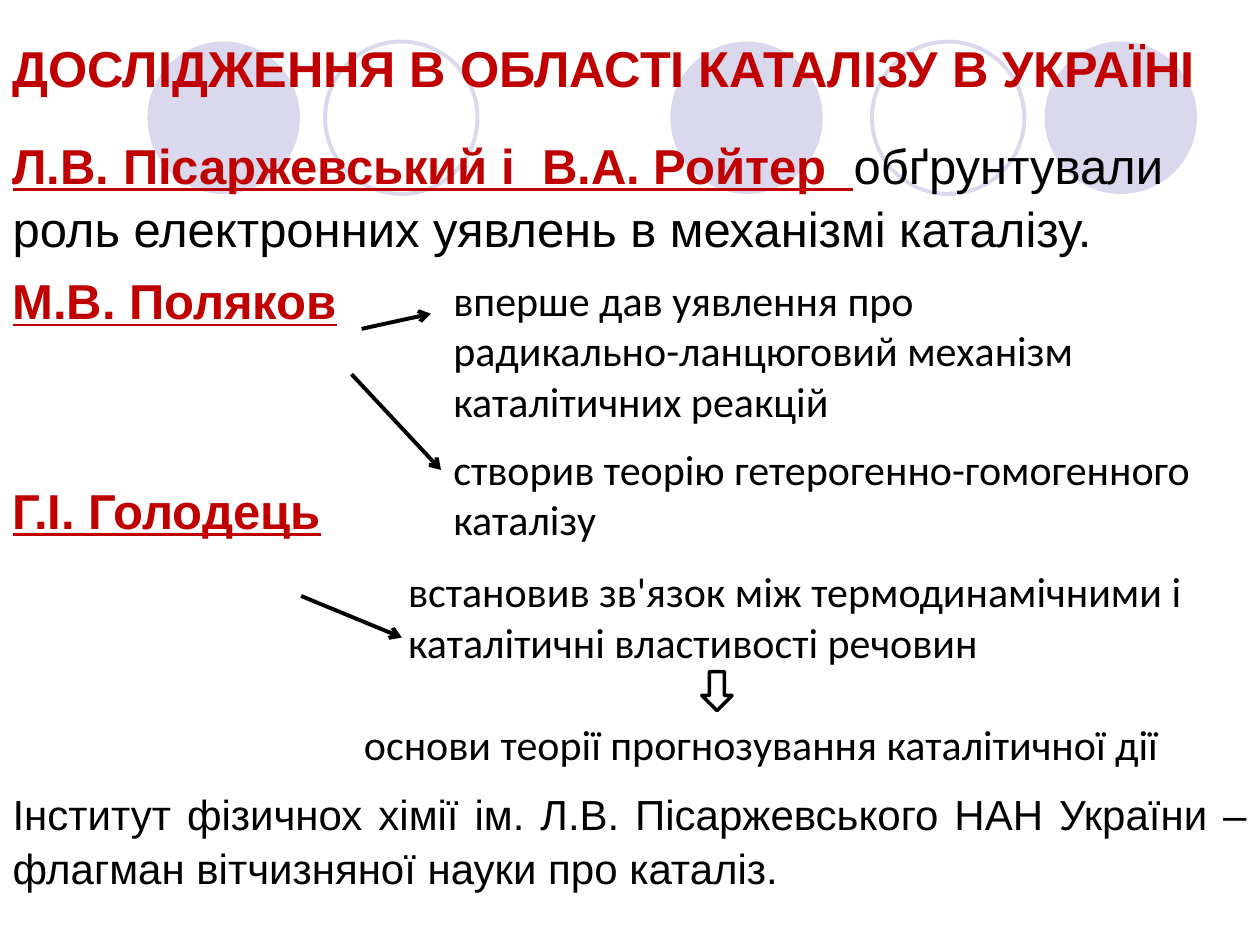
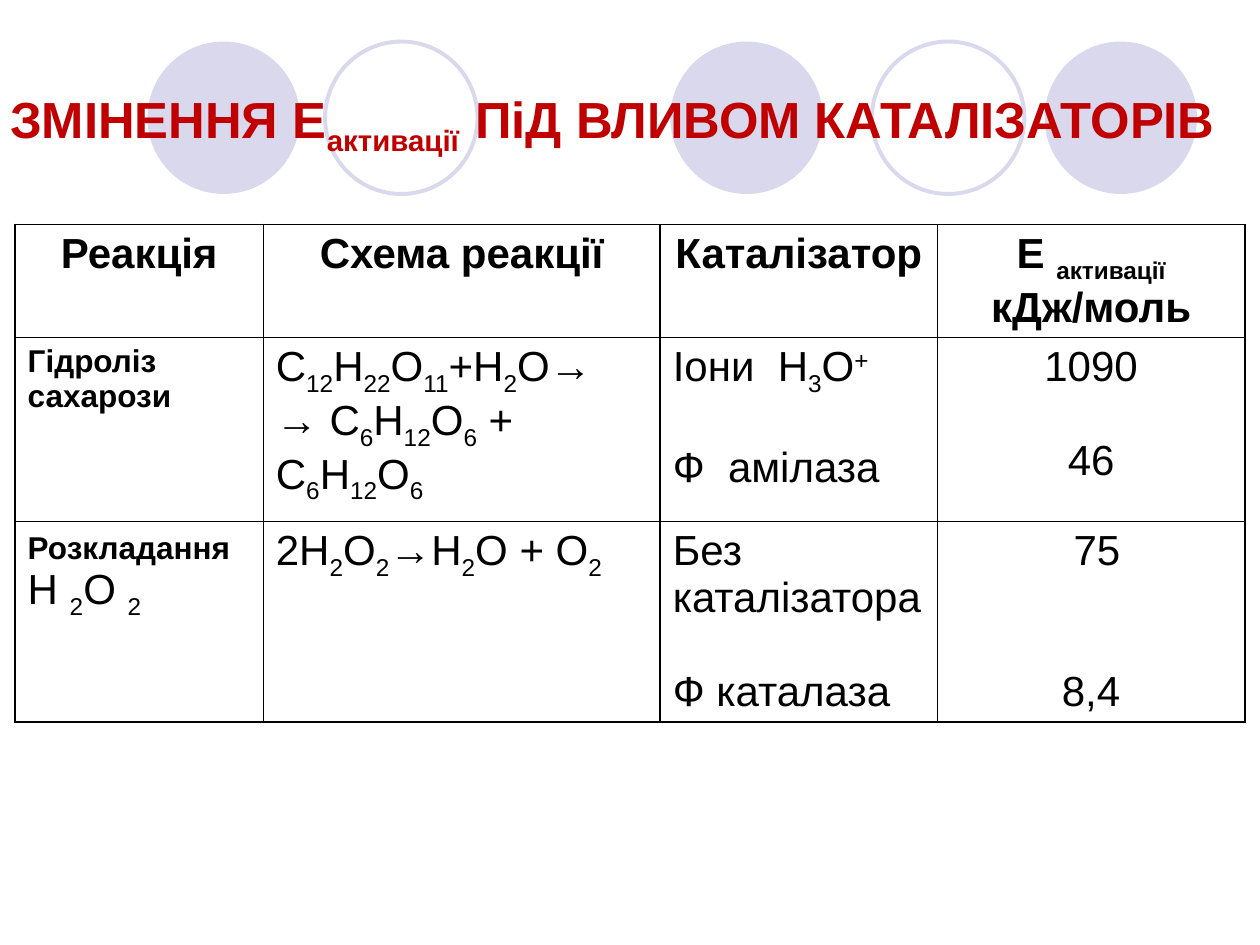
from lxml import etree
from pptx import Presentation
from pptx.dml.color import RGBColor
from pptx.enum import shapes, text
from pptx.oxml import ns
from pptx.util import Inches, Pt

HUE = {"red": "C00000", "ink": "000000", "ring": "D9D8EC"}
LEFT, MID, JUST = text.PP_ALIGN.LEFT, text.PP_ALIGN.CENTER, text.PP_ALIGN.JUSTIFY


def write(para, words, size, hue="ink", bold=False, under=False, font="Arial"):
    """Add runs; parts between underscores are lowered, a lone + is raised."""
    for i, part in enumerate(words.split("_")):
        if not part:
            continue
        run = para.add_run()
        run.text = part
        face = run.font
        face.name, face.size, face.bold, face.underline = font, Pt(size), bold, under
        face.color.rgb = RGBColor.from_string(HUE[hue])
        if i % 2:
            shift = "30000" if part == "+" else "-25000"
            run._r.get_or_add_rPr().set("baseline", shift)


def place(shape, *box):
    shape.left, shape.top, shape.width, shape.height = map(Inches, box)


prs = Presentation()
prs.slide_width, prs.slide_height = Inches(10), Inches(7.5)
work = prs.slides.add_slide(prs.slide_layouts[1])
data = prs.slides.add_slide(prs.slide_layouts[5])

# Circles shared through the master
tree = prs.slide_master.shapes.element
rings = [(5.32, True), (8.29, True), (1.17, True), (6.92, False), (2.58, False)]
for i, (x, full) in enumerate(rings):
    ring = work.shapes.add_shape(shapes.MSO_SHAPE.OVAL, Inches(x), Inches(0.33),
                                 Inches(1.21), Inches(1.21))
    ring.shadow.inherit = False
    tint = RGBColor.from_string(HUE["ring"])
    if full:
        ring.fill.solid()
        ring.fill.fore_color.rgb = tint
        ring.line.fill.background()
    else:
        ring.fill.background()
        ring.line.color.rgb = tint
        ring.line.width = Pt(2.25)
    ring.element.nvSpPr.cNvPr.set("id", str(50 + i))
    ring.name = f"Circle {i + 1}"
    tree.insert(2 + i, ring.element)

# Titles
heads = [
    (work, 0, 0, 28.8, "ДОСЛІДЖЕННЯ В ОБЛАСТІ КАТАЛІЗУ В УКРАЇНІ"),
    (data, -0.02, 0.44, 29, "ЗМІНЕННЯ Е_активації  _ПіД ВЛИВОМ КАТАЛІЗАТОРІВ"),
]
for slide, x, y, size, words in heads:
    title = slide.shapes.title
    place(title, x, y, 10, 1.07)
    frame = title.text_frame
    frame.auto_size = text.MSO_AUTO_SIZE.NONE
    frame.vertical_anchor = text.MSO_ANCHOR.MIDDLE
    frame.paragraphs[0].alignment = LEFT
    write(frame.paragraphs[0], words, size, "red", True)

# Slide 1: researchers
body = work.placeholders[1]
place(body, 0, 0.99, 10, 6.51)
frame = body.text_frame
frame.auto_size = text.MSO_AUTO_SIZE.NONE
names = [
    (5.6, LEFT, 28, "Л.В. Пісаржевський і  В.А. Ройтер  ",
     "обґрунтували роль електронних уявлень в механізмі каталізу."),
    (5.6, LEFT, 28, "М.В. Поляков", ""),
    (83.5, LEFT, 28, "Г.І. Голодець", ""),
    (140.5, JUST, 24, "", "Інститут фізичнох хімії ім. Л.В. Пісаржевського НАН України – "
     "флагман вітчизняної науки про каталіз."),
]
for i, (gap, side, size, name, rest) in enumerate(names):
    para = frame.paragraphs[0] if i == 0 else frame.add_paragraph()
    para.alignment, para.space_before, para.line_spacing = side, Pt(gap), 1.07
    props = para._p.get_or_add_pPr()
    props.set("marL", "0")
    props.set("indent", "0")
    etree.SubElement(props, ns.qn("a:buNone"))
    write(para, name, size, "red", True, True)
    write(para, rest, size)

notes = [
    (3.5, 2.13, 5.67, 1.31, True,
     ["вперше дав уявлення про", "радикально-ланцюговий механізм каталітичних реакцій"]),
    (3.5, 3.47, 6.06, 0.91, False,
     ["створив теорію гетерогенно-гомогенного", "каталізу"]),
    (3.14, 4.44, 7.03, 0.91, True,
     ["встановив зв'язок між термодинамічними і каталітичні властивості речовин"]),
    (2.79, 5.65, 6.56, 0.5, False,
     ["основи теорії прогнозування каталітичної дії"]),
]
for *box, wrap, lines in notes:
    note = work.shapes.add_textbox(*map(Inches, box))
    frame = note.text_frame
    frame.word_wrap = wrap
    frame.auto_size = text.MSO_AUTO_SIZE.SHAPE_TO_FIT_TEXT
    for i, words in enumerate(lines):
        para = frame.paragraphs[0] if i == 0 else frame.add_paragraph()
        write(para, words, 24, font="Calibri")

for ends in [(2.87, 2.61, 3.42, 2.49), (2.79, 2.97, 3.5, 3.73), (2.39, 4.73, 3.19, 5.06)]:
    link = work.shapes.add_connector(shapes.MSO_CONNECTOR.STRAIGHT, *map(Inches, ends))
    link.line.color.rgb = RGBColor.from_string(HUE["ink"])
    link.line.width = Pt(2.25)
    etree.SubElement(link.line._get_or_add_ln(), ns.qn("a:tailEnd"), type="arrow")
    etree.SubElement(link.element.spPr, ns.qn("a:effectLst"))

down = work.shapes.add_shape(shapes.MSO_SHAPE.DOWN_ARROW, Inches(5.57), Inches(5.33),
                             Inches(0.24), Inches(0.31))
down.shadow.inherit = False
down.fill.background()
down.line.color.rgb = RGBColor.from_string(HUE["ink"])
down.line.width = Pt(2)

# Slide 2: each cell lists paragraphs as (space before, run, run, ...)
cells = [
    [
        [(0, ("Реакція", 24, True))],
        [(0, ("Схема реакції", 24, True))],
        [(0, ("Каталізатор", 24, True))],
        [(0, ("Е _активації_", 24, True)), (0, ("кДж/моль", 24, True))],
    ],
    [
        [(0, ("Гідроліз сахарози", 18, True))],
        [(0, ("С_12_Н_22_О_11_+Н_2_О→", 24)),
         (0, ("→ С_6_Н_12_О_6_ + С_6_Н_12_О_6_", 24))],
        [(0, ("Іони  Н_3_О_+_", 24)), (26.8, ("Ф  амілаза", 24))],
        [(0, ("1090", 24)), (26.8, ("46", 24))],
    ],
    [
        [(0, ("Розкладання", 18, True), (" ", 20)), (0, ("Н _2_О _2_", 24))],
        [(0, ("2Н_2_О_2_", 24), ("→", 24, False, "Times New Roman"),
          ("Н_2_О + О_2_", 24))],
        [(0, ("Без каталізатора", 24)), (26.8, ("Ф каталаза", 24))],
        [(0, (" 75", 24)), (53.6, ("8,4", 24))],
    ],
]
wide, high = [1.97, 3.15, 2.2, 2.44], [0.9, 1.46, 1.59]
grid = data.shapes.add_table(3, 4, Inches(0.12), Inches(1.78),
                             Inches(sum(wide)), Inches(sum(high))).table
grid.first_row = grid.horz_banding = False
for col, w in zip(grid.columns, wide):
    col.width = Inches(w)
for r, row in enumerate(cells):
    grid.rows[r].height = Inches(high[r])
    for c, paras in enumerate(row):
        cell = grid.cell(r, c)
        cell.fill.background()
        props = cell._tc.get_or_add_tcPr()
        for i, edge in enumerate(["lnL", "lnR", "lnT", "lnB"]):
            line = etree.Element(ns.qn("a:" + edge), w=str(Pt(1)))
            fill = etree.SubElement(line, ns.qn("a:solidFill"))
            etree.SubElement(fill, ns.qn("a:srgbClr"), val=HUE["ink"])
            props.insert(i, line)
        for i, (gap, *runs) in enumerate(paras):
            frame = cell.text_frame
            para = frame.paragraphs[0] if i == 0 else frame.add_paragraph()
            para.alignment = MID if r == 0 or c == 3 else LEFT
            para.space_before = Pt(gap)
            for words, size, *more in runs:
                bold, font = (more + [False, "Arial"][len(more):])
                write(para, words, size, bold=bold, font=font)

prs.save("out.pptx")
